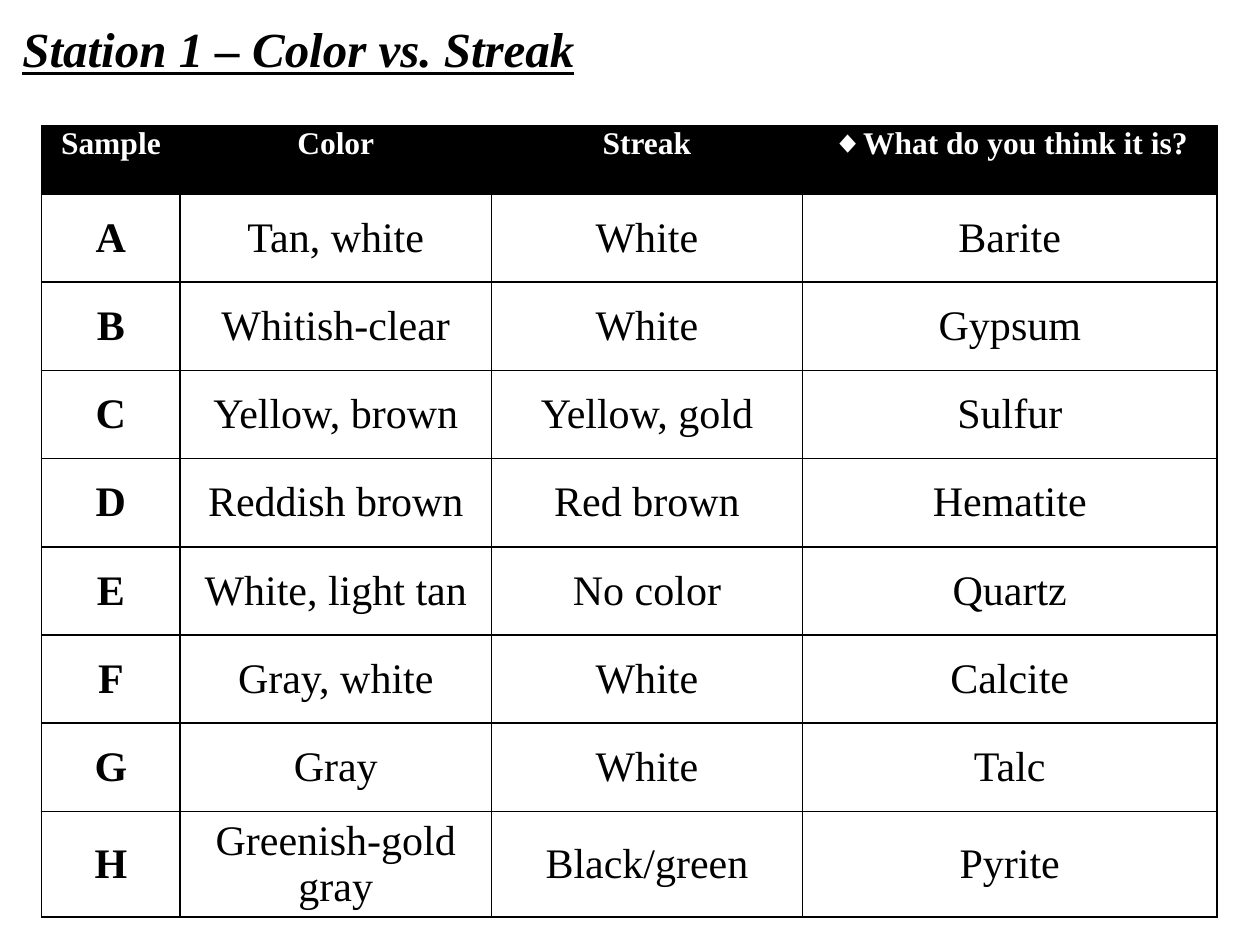
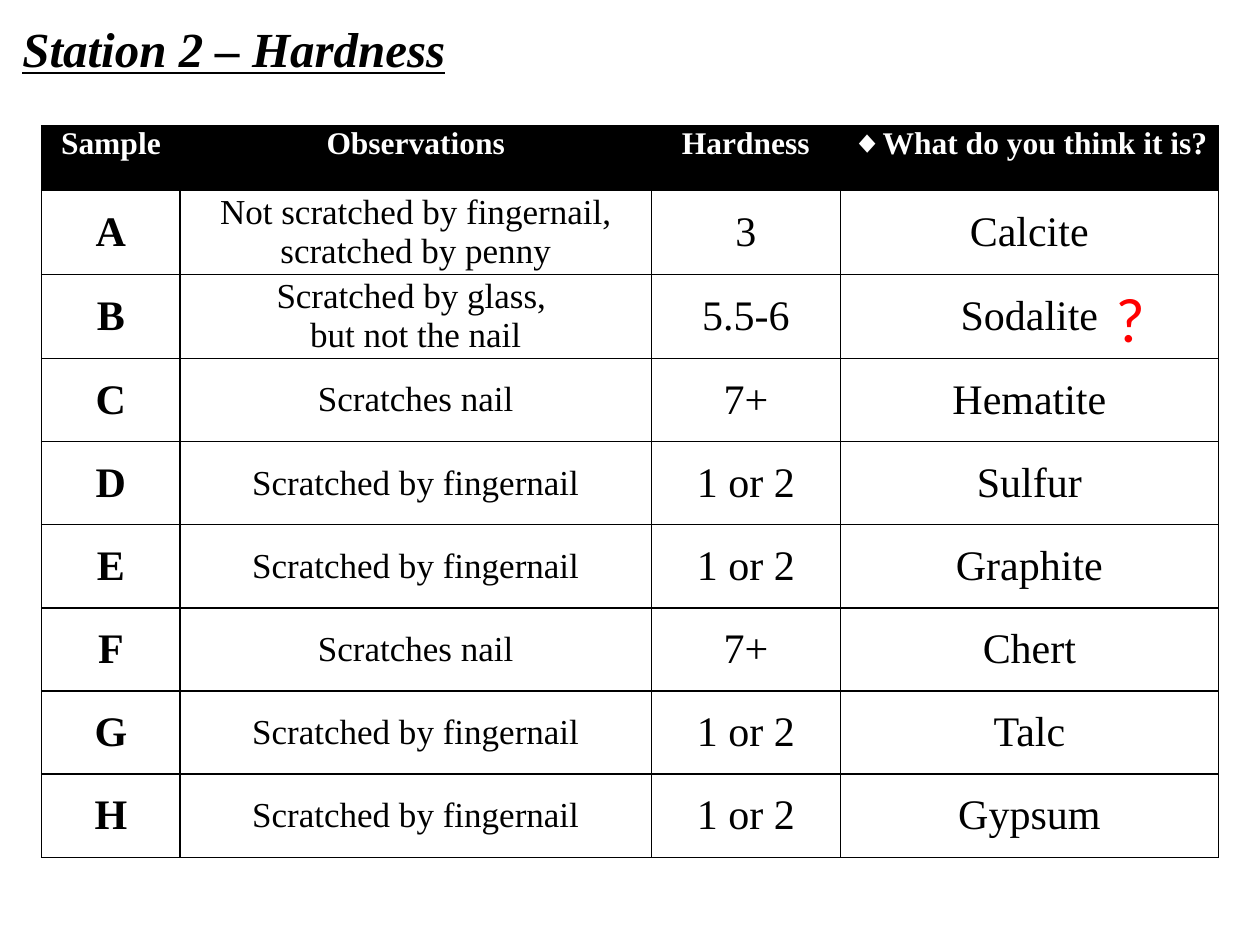
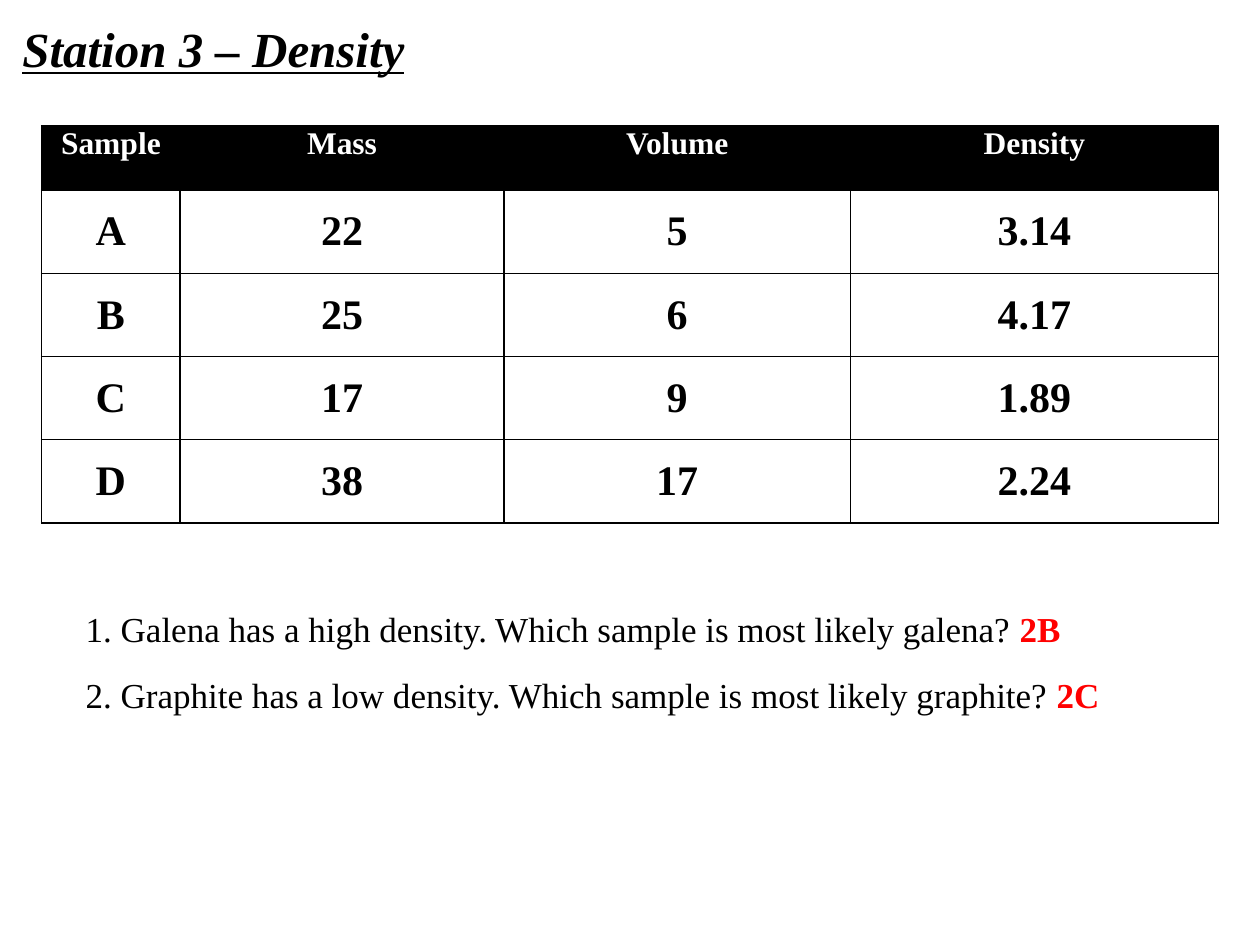
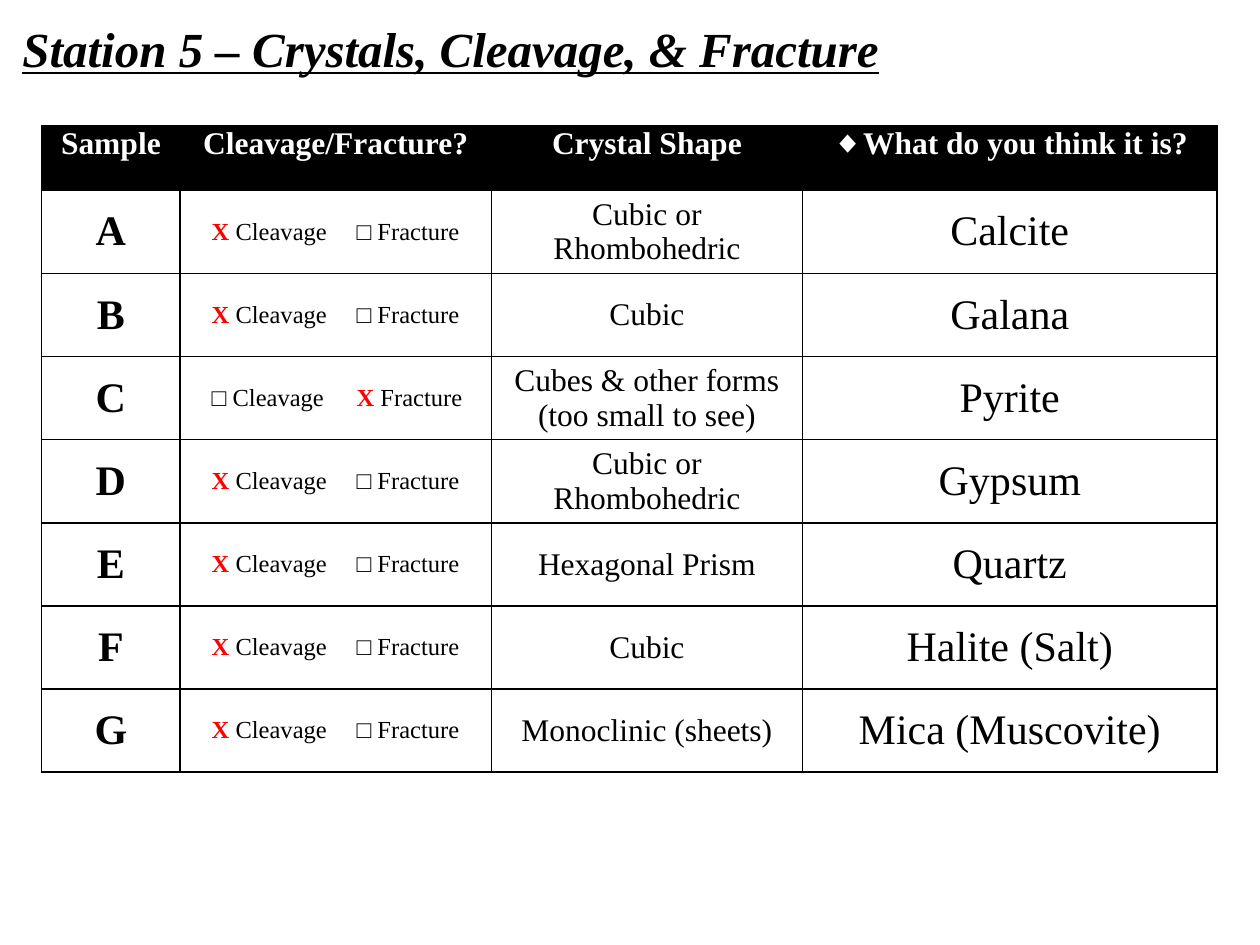
"""Build four mineral lab answer slides, each with a title and a results table."""
from dataclasses import dataclass

from lxml import etree
from pptx import Presentation
from pptx.dml.color import RGBColor
from pptx.enum.text import MSO_ANCHOR, PP_ALIGN
from pptx.oxml.ns import qn
from pptx.util import Inches, Pt

TOP, MIDDLE = MSO_ANCHOR.TOP, MSO_ANCHOR.MIDDLE
LEFT, CENTER = PP_ALIGN.LEFT, PP_ALIGN.CENTER

COLORS = {"ink": "000000", "paper": "FFFFFF", "answer": "FF0000"}
SERIF, SANS = "Times New Roman", "Calibri"
TITLE = {"name": SERIF, "size": Pt(28), "bold": True, "italic": True, "underline": True}
HEADER = {"name": SERIF, "size": Pt(18), "bold": True}
QUESTION = {"name": SERIF, "size": Pt(20), "bold": False}
DOUBT = {"name": SANS, "size": Pt(36), "bold": False}
GUESS = "◆What do you think it is?"
CLEAVAGE = "*X* Cleavage\t□ Fracture"
FRACTURE = "□ Cleavage\t*X* Fracture"


@dataclass
class Column:
    head: str
    width: float
    size: int = 24
    bold: bool = False
    inset: float = 0.07
    tab: float = 0


@dataclass
class Station:
    title: str
    columns: list[Column]
    rows: list[tuple[str, ...]]
    title_height: float = 0.57
    head_height: float = 0.51
    row_height: float = 0.66
    last_height: float = 0.66


@dataclass
class Note:
    lines: list[str]
    box: tuple[float, float, float, float]
    fmt: dict
    color: str = "ink"
    align: PP_ALIGN = LEFT
    indent: float = 0.1
    wrap: bool = True
    gap: int = 0


SAMPLE = Column("Sample", 1.1, bold=True)

STATIONS = [
    Station(
        "Station 1 – Color vs. Streak",
        [SAMPLE, Column("Color", 2.47), Column("Streak", 2.47), Column(GUESS, 3.29)],
        [
            ("Tan, white", "White", "Barite"),
            ("Whitish-clear", "White", "Gypsum"),
            ("Yellow, brown", "Yellow, gold", "Sulfur"),
            ("Reddish brown", "Red brown", "Hematite"),
            ("White, light tan", "No color", "Quartz"),
            ("Gray, white", "White", "Calcite"),
            ("Gray", "White", "Talc"),
            ("Greenish-gold gray", "Black/green", "Pyrite"),
        ],
        title_height=0.91, head_height=0.54, row_height=0.7, last_height=0.84,
    ),
    Station(
        "Station 2 – Hardness",
        [SAMPLE, Column("Observations", 3.74, 20), Column("Hardness", 1.5), Column(GUESS, 3)],
        [
            ("Not scratched by fingernail, scratched by penny", "3", "Calcite"),
            ("Scratched by glass, \vbut not the nail", "5.5-6", "Sodalite"),
            ("Scratches nail", "7+", "Hematite"),
            ("Scratched by fingernail", "1 or 2", "Sulfur"),
            ("Scratched by fingernail", "1 or 2", "Graphite"),
            ("Scratches nail", "7+", "Chert"),
            ("Scratched by fingernail", "1 or 2", "Talc"),
            ("Scratched by fingernail", "1 or 2", "Gypsum"),
        ],
    ),
    Station(
        "Station 3 – Density",
        [SAMPLE, Column("Mass", 2.57, bold=True), Column("Volume", 2.75, bold=True),
         Column("Density", 2.92, bold=True)],
        [("22", "5", "3.14"), ("25", "6", "4.17"), ("17", "9", "1.89"), ("38", "17", "2.24")],
    ),
    Station(
        "Station 5 – Crystals, Cleavage, & Fracture",
        [SAMPLE, Column("Cleavage/Fracture?", 2.47, 14, inset=0.25, tab=1.15),
         Column("Crystal Shape", 2.47, 18), Column(GUESS, 3.29)],
        [
            (CLEAVAGE, "Cubic or\nRhombohedric", "Calcite"),
            (CLEAVAGE, "Cubic", "Galana"),
            (FRACTURE, "Cubes & other forms (too small to see)", "Pyrite"),
            (CLEAVAGE, "Cubic or\nRhombohedric", "Gypsum"),
            (CLEAVAGE, "Hexagonal Prism", "Quartz"),
            (CLEAVAGE, "Cubic", "Halite (Salt)"),
            (CLEAVAGE, "Monoclinic (sheets)", "Mica (Muscovite)"),
        ],
    ),
]

NOTES = {
    "Station 2 – Hardness": Note(
        ["?"], (8.75, 2.17, 0.44, 0.71), DOUBT, "answer", CENTER, wrap=False),
    "Station 3 – Density": Note(
        ["1. Galena has a high density. Which sample is most likely galena? *2B*",
         "2. Graphite has a low density. Which sample is most likely graphite? *2C*"],
        (0.17, 4.77, 9.08, 1.57), QUESTION, indent=0.51, gap=14),
}


def write(p, text: str, fmt: dict, color: str, align: PP_ALIGN) -> None:
    """Fill a paragraph; text between asterisks becomes a bold answer."""
    p.alignment = align
    for i, piece in enumerate(text.split("*")):
        marked = i % 2 == 1
        for j, line in enumerate(piece.split("\v")):
            if j:
                p.add_line_break()
            if not line:
                continue
            r = p.add_run()
            r.text = line
            for key, value in fmt.items():
                setattr(r.font, key, value)
            if marked:
                r.font.bold = True
            r.font.color.rgb = RGBColor.from_string(COLORS["answer" if marked else color])


def write_lines(tf, lines: list[str], fmt: dict, color: str, align: PP_ALIGN) -> None:
    """Write one paragraph per line."""
    for i, line in enumerate(lines):
        p = tf.add_paragraph() if i else tf.paragraphs[0]
        write(p, line, fmt, color, align)


def add_note(slide, note: Note) -> None:
    """Add a text box."""
    tf = slide.shapes.add_textbox(*map(Inches, note.box)).text_frame
    tf.word_wrap = note.wrap
    tf.vertical_anchor = TOP
    tf.margin_left = Inches(note.indent)
    write_lines(tf, note.lines, note.fmt, note.color, note.align)
    for p in tf.paragraphs[:-1]:
        p.space_after = Pt(note.gap)


def add_borders(cell) -> None:
    """Draw a thin line on every side of a cell."""
    tc_pr = cell._tc.get_or_add_tcPr()
    for side in ("lnL", "lnR", "lnT", "lnB"):
        ln = etree.SubElement(tc_pr, qn(f"a:{side}"), w=str(Pt(1)))
        fill = etree.SubElement(ln, qn("a:solidFill"))
        etree.SubElement(fill, qn("a:srgbClr"), val=COLORS["ink"])


def add_tab(p, position: float) -> None:
    """Set a left tab stop."""
    tabs = etree.SubElement(p._p.get_or_add_pPr(), qn("a:tabLst"))
    etree.SubElement(tabs, qn("a:tab"), pos=str(Inches(position)), algn="l")


def fill_cell(cell, text: str, column: Column, is_head: bool) -> None:
    """Format one cell and write its text."""
    inset = 0.07 if is_head else column.inset
    layout = {
        "margin_left": Inches(inset), "margin_right": Inches(0.07),
        "margin_top": 0, "margin_bottom": 0,
        "vertical_anchor": TOP if is_head else MIDDLE,
    }
    for key, value in layout.items():
        setattr(cell, key, value)
    add_borders(cell)
    if is_head:
        cell.fill.solid()
        cell.fill.fore_color.rgb = RGBColor.from_string(COLORS["ink"])
        write(cell.text_frame.paragraphs[0], text, HEADER, "paper", CENTER)
        return
    cell.fill.background()
    fmt = {"name": SERIF, "size": Pt(column.size), "bold": column.bold}
    align = LEFT if column.tab else CENTER
    write_lines(cell.text_frame, text.split("\n"), fmt, "ink", align)
    if column.tab:
        add_tab(cell.text_frame.paragraphs[0], column.tab)


def add_results(slide, station: Station) -> None:
    """Add the results table, lettering the samples from A."""
    count = len(station.rows)
    heights = [station.head_height, *[station.row_height] * (count - 1), station.last_height]
    widths = [column.width for column in station.columns]
    table = slide.shapes.add_table(
        count + 1, len(widths), Inches(0.33), Inches(1),
        Inches(sum(widths)), Inches(sum(heights))).table
    table.first_row = table.horz_banding = False
    for col, width in zip(table.columns, widths):
        col.width = Inches(width)
    heads = [column.head for column in station.columns]
    samples = [(letter, *row) for letter, row in zip("ABCDEFGH", station.rows)]
    for i, (height, texts) in enumerate(zip(heights, [heads, *samples])):
        table.rows[i].height = Inches(height)
        for j, (text, column) in enumerate(zip(texts, station.columns)):
            fill_cell(table.cell(i, j), text, column, i == 0)


def main() -> None:
    """Build and save the presentation."""
    prs = Presentation()
    prs.slide_width, prs.slide_height = Inches(10), Inches(7.5)
    for station in STATIONS:
        slide = prs.slides.add_slide(prs.slide_layouts[6])
        add_note(slide, Note([station.title], (0.08, 0.1, 9.83, station.title_height), TITLE))
        add_results(slide, station)
        if station.title in NOTES:
            add_note(slide, NOTES[station.title])
    prs.save("out.pptx")


if __name__ == "__main__":
    main()
